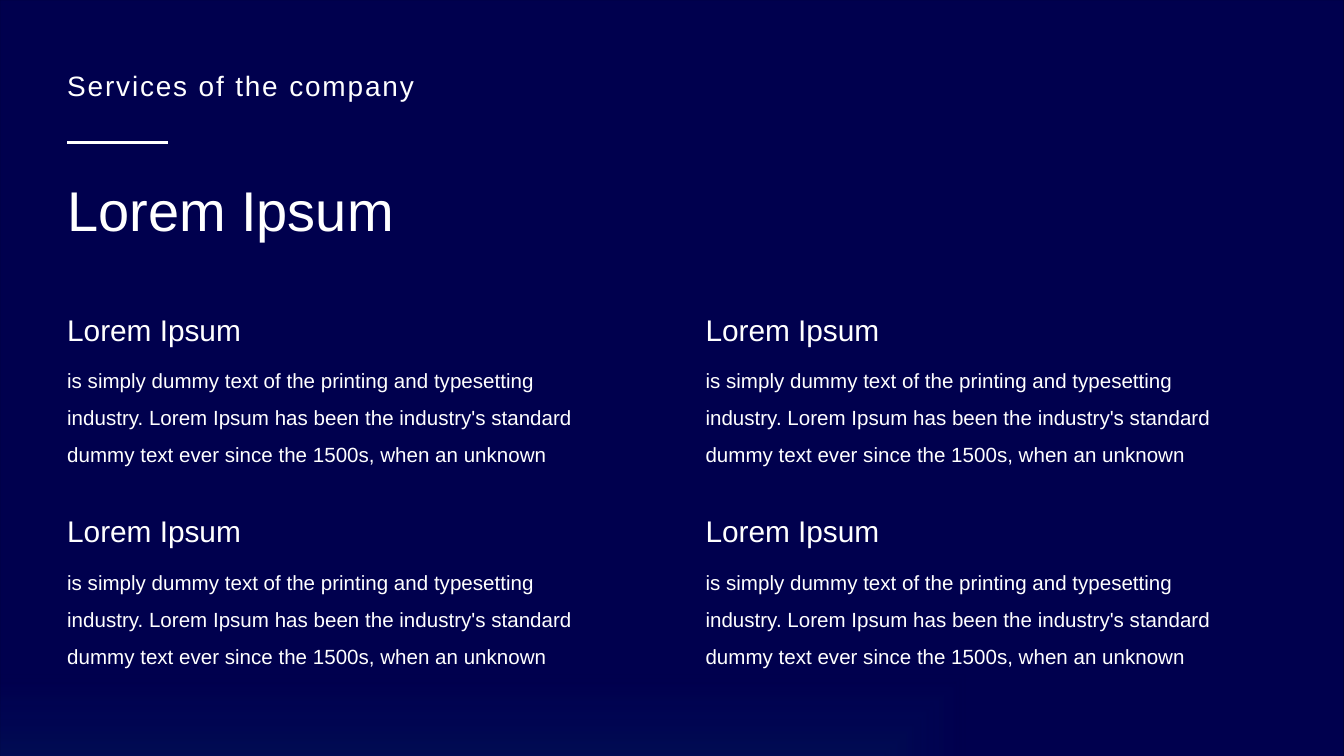
from dataclasses import dataclass
from itertools import product

from lxml import etree
from pptx import Presentation
from pptx.dml.color import RGBColor
from pptx.enum.shapes import MSO_CONNECTOR, MSO_SHAPE
from pptx.enum.text import MSO_ANCHOR
from pptx.oxml.ns import qn
from pptx.util import Inches, Pt

RECT = MSO_SHAPE.RECTANGLE
LINE = MSO_CONNECTOR.STRAIGHT
MID, LOW = MSO_ANCHOR.MIDDLE, MSO_ANCHOR.BOTTOM

NAME = "Lorem Ipsum"
BODY = (
    "is simply dummy text of the printing and typesetting industry. "
    "Lorem Ipsum has been the industry's standard dummy text ever since "
    "the 1500s, when an unknown"
)


@dataclass(frozen=True)
class Theme:
    """Colours, type sizes and grid of the deck."""
    font: str = "Arial"
    ink: str = "FFFFFF"
    back: str = "000000"
    glow: tuple = (("008000", 80), ("0000FF", 30))
    kicker: int = 15
    title: int = 30
    head: int = 16
    body: int = 11
    rule: int = 2
    cell: float = 0.25
    top: float = 0.06


class Deck:
    """Draws styled elements on the current slide."""

    def __init__(self, prs, theme):
        self.prs, self.theme = prs, theme
        self.slide = prs.slides.add_slide(prs.slide_layouts[6])

    def spot(self, col, row):
        """Turn a grid position into slide lengths."""
        cell = self.theme.cell
        return Inches(col * cell), Inches(self.theme.top + row * cell)

    def ground(self):
        """Fill the slide and lay a clear gradient over it."""
        fill = self.slide.background.fill
        fill.solid()
        fill.fore_color.rgb = RGBColor.from_string(self.theme.back)
        size = self.prs.slide_width, self.prs.slide_height
        shape = self.slide.shapes.add_shape(RECT, 0, 0, *size)
        shape.shadow.inherit = False
        shape.line.fill.background()
        shape.fill.gradient()
        grad = shape._element.spPr.find(qn("a:gradFill"))
        for stop, (tint, _) in zip(shape.fill.gradient_stops, self.theme.glow):
            stop.color.rgb = RGBColor.from_string(tint)
        for tone, (_, share) in zip(grad.iter(qn("a:srgbClr")), self.theme.glow):
            etree.SubElement(tone, qn("a:alpha"), val=str(share * 1000))
        grad.remove(grad.find(qn("a:lin")))
        way = etree.SubElement(grad, qn("a:path"), path="rect")
        etree.SubElement(way, qn("a:fillToRect"), t="100000", r="100000")

    def text(self, words, col, row, rows, size, lead=None, gap=0, **form):
        """Write one paragraph in a box sixteen columns wide."""
        cell = self.theme.cell
        box = self.slide.shapes.add_textbox(
            *self.spot(col, row), Inches(16 * cell), Inches(rows * cell))
        frame = box.text_frame
        base = dict(word_wrap=True, vertical_anchor=MID, margin_left=0,
                    margin_top=0, margin_right=0, margin_bottom=0)
        para = frame.paragraphs[0]
        run = para.add_run()
        run.text = words
        for item, style in (
            (frame, base | form),
            (para, dict(line_spacing=lead, space_before=Pt(size * 0.2))),
            (run.font, dict(name=self.theme.font, size=Pt(size))),
        ):
            for key, value in style.items():
                setattr(item, key, value)
        run.font.color.rgb = RGBColor.from_string(self.theme.ink)
        if gap:
            run._r.get_or_add_rPr().set("spc", str(gap * 100))

    def rule(self, col, row, cols):
        """Draw a level line."""
        line = self.slide.shapes.add_connector(
            LINE, *self.spot(col, row), *self.spot(col + cols, row))
        line.line.width = Pt(self.theme.rule)
        line.line.color.rgb = RGBColor.from_string(self.theme.ink)
        etree.SubElement(line._element.spPr, qn("a:effectLst"))

    def service(self, col, row):
        """Write a heading with its body text."""
        self.text(NAME, col, row, 1, self.theme.head, lead=1.5)
        self.text(BODY, col, row + 1.2, 4, self.theme.body, lead=1.5)


def main():
    """Build and save the slide."""
    prs = Presentation()
    prs.slide_width, prs.slide_height = Inches(10), Inches(10 * 9 / 16)
    theme = Theme()
    deck = Deck(prs, theme)
    deck.ground()
    deck.text("Services of the company", 2, 2, 1, theme.kicker, gap=1,
              vertical_anchor=LOW, margin_top=Inches(0.05),
              margin_right=Inches(0.1), margin_bottom=Inches(0.05))
    deck.rule(2, 4, 3)
    deck.text(NAME, 2, 5, 2, theme.title)
    for col, row in product((2, 21), (8.8, 14.8)):
        deck.service(col, row)
    prs.save("out.pptx")


if __name__ == "__main__":
    main()
